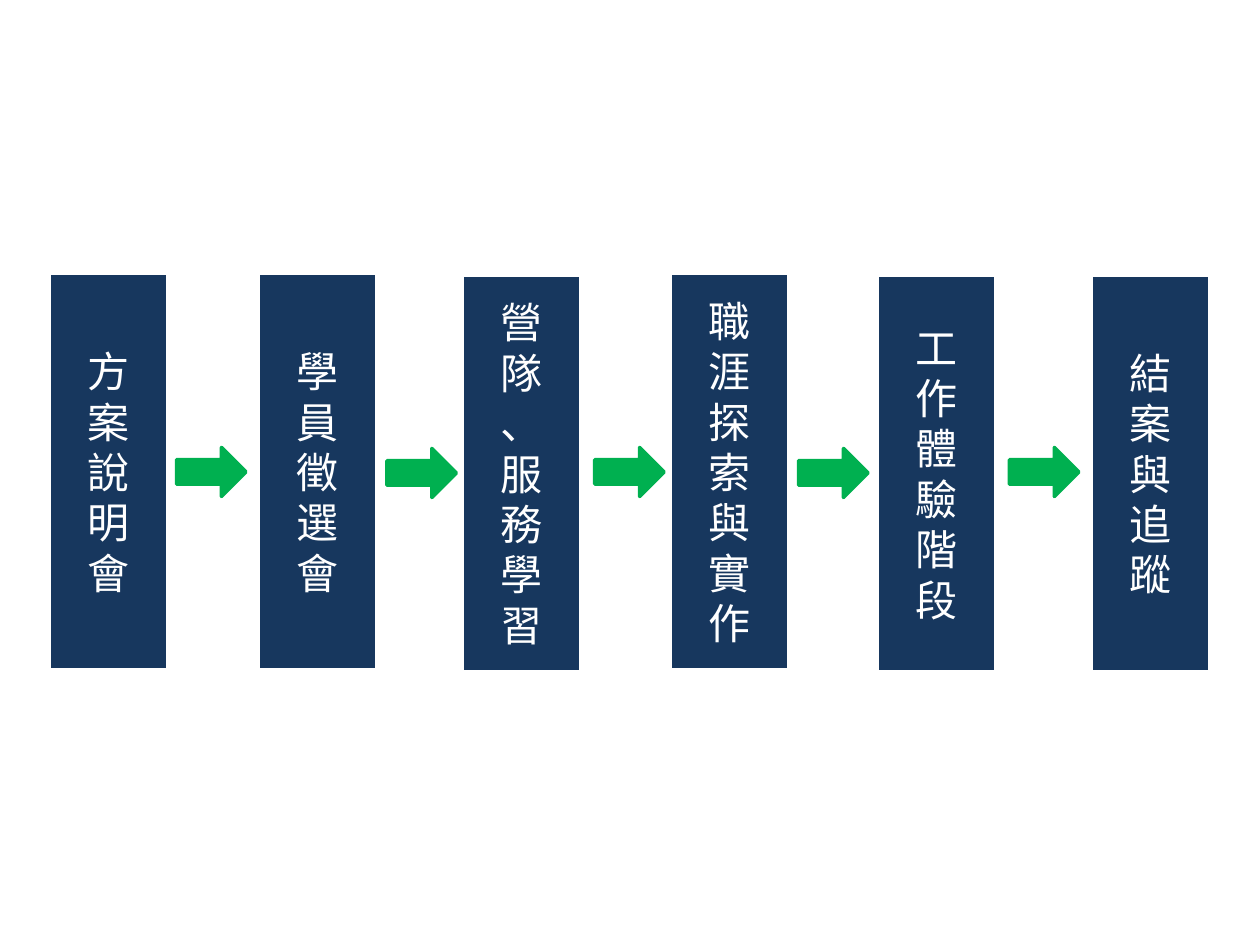
from dataclasses import dataclass
from typing import Any

from lxml import etree
from pptx import Presentation
from pptx import util as u
from pptx.dml.color import RGBColor
from pptx.enum import shapes, text
from pptx.oxml import ns

FONT = "Noto Sans CJK SC"
NAVY, GREEN, WHITE = "17375E", "00B050", "FFFFFF"
STAGE_SIZE = (2.39, 8.0)
ARROW_SIZE = (1.4, 0.99)


@dataclass
class Stage:
    label: str
    left: float
    top: float


@dataclass
class Arrow:
    left: float
    top: float


STAGES = [
    Stage("方案說明會", 0.99, 5.51),
    Stage("學員徵選會", 5.21, 5.51),
    Stage("營隊、服務學習", 9.32, 5.54),
    Stage("職涯探索與實作", 13.51, 5.51),
    Stage("工作體驗階段", 17.68, 5.54),
    Stage("結案與追蹤", 22.0, 5.54),
]
ARROWS = [
    Arrow(3.56, 9.02),
    Arrow(7.8, 9.04),
    Arrow(11.99, 9.02),
    Arrow(16.1, 9.04),
    Arrow(20.35, 9.02),
]


def color(value: str) -> RGBColor:
    return RGBColor.from_string(value)


def apply_format(target: Any, values: dict[str, Any]) -> None:
    for name, value in values.items():
        setattr(target, name, value)


def add_block(parent: Any, kind: Any, left: float, top: float,
              size: tuple[float, float], fill: str, line: str) -> Any:
    shape = parent.shapes.add_shape(
        kind, *(u.Cm(length) for length in (left, top, *size)))
    shape.shadow.inherit = False
    shape.fill.solid()
    shape.fill.fore_color.rgb = color(fill)
    shape.line.color.rgb = color(line)
    shape.line.width = u.Pt(2)
    return shape


def draw_stage(parent: Any, stage: Stage) -> None:
    shape = add_block(parent, shapes.MSO_SHAPE.RECTANGLE, stage.left, stage.top,
                      STAGE_SIZE, NAVY, WHITE)
    frame = shape.text_frame
    apply_format(frame, {"vertical_anchor": text.MSO_ANCHOR.MIDDLE,
                         "word_wrap": True})
    frame.text = "\n".join(stage.label)
    for paragraph in frame.paragraphs:
        apply_format(paragraph, {"alignment": text.PP_ALIGN.CENTER,
                                 "line_spacing": u.Pt(28.8)})
        for run in paragraph.runs:
            apply_format(run.font, {"name": FONT, "size": u.Pt(24)})
            run.font.color.rgb = color(WHITE)
            east_asian = etree.SubElement(run.font._element, ns.qn("a:ea"))
            east_asian.set("typeface", FONT)


def draw_arrow(parent: Any, arrow: Arrow) -> None:
    add_block(parent, shapes.MSO_SHAPE.RIGHT_ARROW, arrow.left, arrow.top,
              ARROW_SIZE, GREEN, GREEN)


def main() -> None:
    presentation = Presentation()
    apply_format(presentation, {"slide_width": u.Cm(25.4),
                                "slide_height": u.Cm(19.05)})
    slide = presentation.slides.add_slide(presentation.slide_layouts[6])
    process = slide.shapes.add_group_shape()
    for index, stage in enumerate(STAGES):
        draw_stage(process, stage)
        if index < len(ARROWS):
            draw_arrow(process, ARROWS[index])
    presentation.save("out.pptx")


if __name__ == "__main__":
    main()
